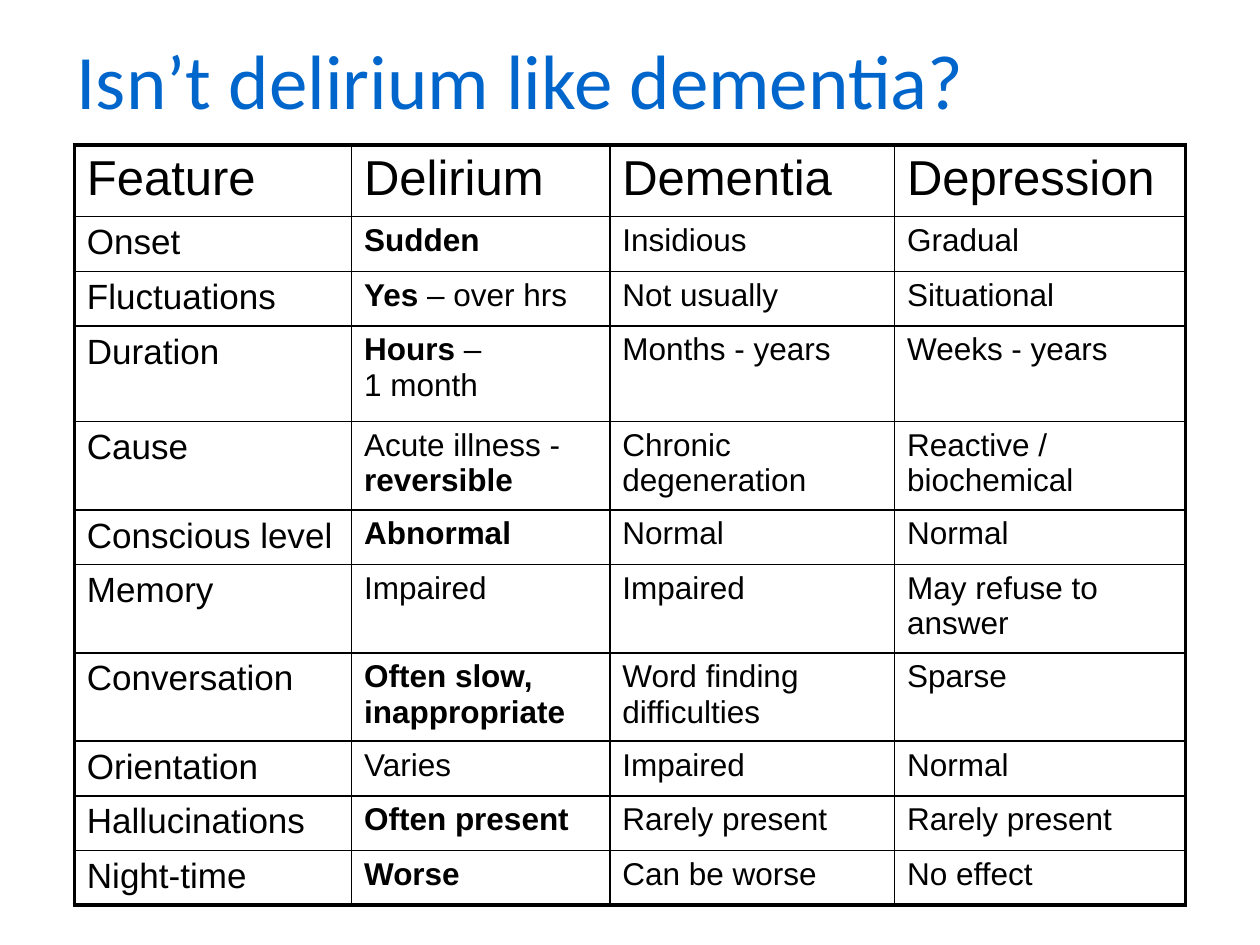
"""Build a slide with a table comparing delirium, dementia and depression."""
from lxml import etree
from pptx import Presentation
from pptx.dml.color import RGBColor
from pptx.enum import text
from pptx.oxml import ns
from pptx.util import Inches, Pt

BLUE = RGBColor(0x00, 0x66, 0xCC)
BLACK = RGBColor(0x00, 0x00, 0x00)
COLS = [2.2, 2.05, 2.26, 2.31]
SHORT, TALL = 0.43, 0.7
ROWS = [
    (0.57, "Feature", "Delirium", "Dementia", "Depression"),
    (SHORT, "Onset", "*Sudden*", "Insidious", "Gradual"),
    (SHORT, "Fluctuations", "*Yes* – over hrs", "Not usually", "Situational"),
    (0.76, "Duration", "*Hours* –\n1 month", "Months - years", "Weeks - years"),
    (TALL, "Cause", "Acute illness - *reversible*", "Chronic degeneration",
     "Reactive / biochemical"),
    (SHORT, "Conscious level", "*Abnormal*", "Normal", "Normal"),
    (TALL, "Memory", "Impaired", "Impaired", "May refuse to answer"),
    (TALL, "Conversation", "*Often slow, inappropriate*",
     "Word finding difficulties", "Sparse"),
    (SHORT, "Orientation", "Varies", "Impaired", "Normal"),
    (SHORT, "Hallucinations", "*Often present*", "Rarely present", "Rarely present"),
    (SHORT, "Night-time", "*Worse*", "Can be worse", "No effect"),
]


def write(para, words, size, face, color):
    for i, part in enumerate(words.split("*")):
        for j, line in enumerate(part.split("\n")):
            if j:
                para.add_line_break()
            if line:
                run = para.add_run()
                run.text = line
                look = {"size": Pt(size), "name": face, "bold": i % 2 == 1}
                for key, val in look.items():
                    setattr(run.font, key, val)
                run.font.color.rgb = color


def edge(cell, side, width):
    line = etree.SubElement(cell._tc.get_or_add_tcPr(), ns.qn(f"a:ln{side}"), w=str(Pt(width)))
    fill = etree.SubElement(line, ns.qn("a:solidFill"))
    etree.SubElement(fill, ns.qn("a:srgbClr"), val=str(BLACK))


deck = Presentation()
deck.slide_width, deck.slide_height = Inches(10), Inches(7.5)
slide = deck.slides.add_slide(deck.slide_layouts[6])

title = slide.shapes.add_textbox(Inches(0.51), Inches(0), Inches(9), Inches(1.25))
frame = title.text_frame
frame.word_wrap = True
frame.vertical_anchor = text.MSO_ANCHOR.MIDDLE
write(frame.paragraphs[0], "Isn’t delirium like dementia?", 44, "Calibri", BLUE)

high = sum(row[0] for row in ROWS)
grid = slide.shapes.add_table(len(ROWS), len(COLS), Inches(0.59), Inches(1.15),
                              Inches(sum(COLS)), Inches(high)).table
grid.first_row = grid.horz_banding = False
for col, width in zip(grid.columns, COLS):
    col.width = Inches(width)

for r, (height, *words) in enumerate(ROWS):
    grid.rows[r].height = Inches(height)
    for c, word in enumerate(words):
        cell = grid.cell(r, c)
        size = 28 if r == 0 else 20 if c == 0 else 18
        write(cell.text_frame.paragraphs[0], word, size, "Arial", BLACK)
        outer = {"L": c == 0, "R": c == len(COLS) - 1,
                 "T": r == 0, "B": r == len(ROWS) - 1}
        for side, thick in outer.items():
            edge(cell, side, 2.25 if thick else 1)
        cell.fill.background()

deck.save("out.pptx")
